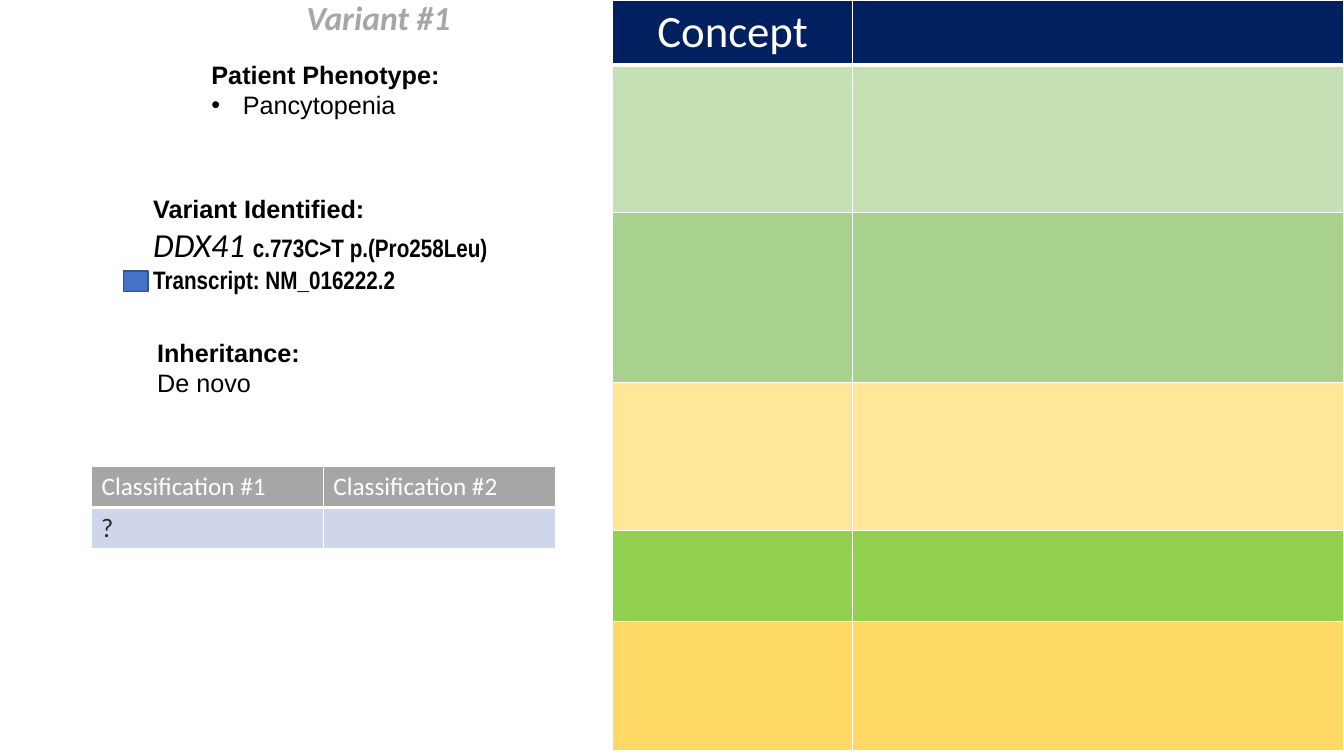
from lxml.etree import SubElement
from pptx import Presentation
from pptx.dml.color import RGBColor
from pptx.enum.shapes import MSO_SHAPE
from pptx.enum.text import PP_ALIGN
from pptx.oxml.ns import qn
from pptx.util import Cm, Pt

WHITE, BLACK, GREY = "FFFFFF", "000000", "A6A6A6"
HEAD = ("Arial", 18, BLACK, True, False)
BODY = ("Arial", 18, BLACK, False, False)
GENE = ("Calibri", 24, BLACK, False, True)
CODE = ("Arial Narrow", 18, BLACK, True, False)
TITLE = ("Calibri", 24, GREY, True, True)


def color(code):
    return RGBColor.from_string(code)


def style(run, look):
    font = run.font
    font.name, size, code, font.bold, font.italic = look
    font.size = Pt(size)
    font.color.rgb = color(code)


def fill_line(line, parts):
    for text, look in parts:
        run = line.add_run()
        run.text = text
        style(run, look)


def add_text(slide, box, lines, wrap=True):
    frame = slide.shapes.add_textbox(*map(Cm, box)).text_frame
    frame.word_wrap = wrap
    for index, parts in enumerate(lines):
        line = frame.add_paragraph() if index else frame.paragraphs[0]
        fill_line(line, parts)
    return frame


def add_bullet(line):
    props = line._p.get_or_add_pPr()
    props.set("marL", str(Cm(0.79)))
    props.set("indent", str(-Cm(0.79)))
    SubElement(props, qn("a:buFont")).set("typeface", "Arial")
    SubElement(props, qn("a:buChar")).set("char", "•")


def add_edges(cell, base):
    props = cell._tc.get_or_add_tcPr()
    for side, width in (("L", 1), ("R", 1), ("T", 1), ("B", base)):
        edge = SubElement(props, qn(f"a:ln{side}"), w=str(Pt(width)))
        paint = SubElement(edge, qn("a:solidFill"))
        SubElement(paint, qn("a:srgbClr"), val=WHITE)


def add_grid(slide, left, top, widths, heights, fills, base):
    shape = slide.shapes.add_table(
        len(heights), len(widths), Cm(left), Cm(top),
        Cm(sum(widths)), Cm(sum(heights)))
    table = shape.table
    for column, width in zip(table.columns, widths):
        column.width = Cm(width)
    for index, (row, height, code) in enumerate(zip(table.rows, heights, fills)):
        row.height = Cm(height)
        for cell in row.cells:
            add_edges(cell, 1 if index else base)
            cell.fill.solid()
            cell.fill.fore_color.rgb = color(code)
    return table


def set_cell(cell, text, look):
    line = cell.text_frame.paragraphs[0]
    fill_line(line, [(text, look)])
    return line


def add_concepts(slide, left, top):
    table = add_grid(
        slide, left, top, [6.05, 12.37],
        [1.57, 3.71, 4.29, 3.73, 2.29, 3.25],
        ["002060", "C5E0B4", "A9D18E", "FFE699", "92D050", "FFD966"], 3)
    line = set_cell(table.cell(0, 0), "Concept",
                    ("Calibri", 32, WHITE, False, False))
    line.alignment = PP_ALIGN.CENTER


def add_classes(slide, left, top):
    table = add_grid(slide, left, top, [5.84] * 2, [1.03] * 2,
                     [GREY, "CFD5EA"], 3)
    for index in range(2):
        set_cell(table.cell(0, index), f"Classification #{index + 1}",
                 ("Calibri", 18, WHITE, False, False))
    set_cell(table.cell(1, 0), "?", ("Lato", 18, "2A2A2A", False, False))


def add_marker(slide, box):
    mark = slide.shapes.add_shape(MSO_SHAPE.RECTANGLE, *map(Cm, box))
    mark.shadow.inherit = False
    mark.fill.solid()
    mark.fill.fore_color.rgb = color("4472C4")
    mark.line.color.rgb = color("325491")
    mark.line.width = Pt(1)


def add_case(slide, left, top):
    traits = add_text(slide, (left + 2.77, top + 1.57, 9.96, 2.57), [
        [("Patient Phenotype:", HEAD)],
        [("Pancytopenia", BODY)]])
    add_bullet(traits.paragraphs[1])
    variant = add_text(slide, (left + 1.3, top + 4.95, 9.14, 2.82), [
        [("Variant Identified:", HEAD)],
        [("DDX41 ", GENE), ("c.773C>T p.(Pro258Leu)", CODE)],
        [("Transcript: NM_016222.2", CODE)]])
    for line in variant.paragraphs[1:]:
        line.alignment = PP_ALIGN.JUSTIFY
    add_text(slide, (left + 1.4, top + 8.58, 12.7, 1.8), [
        [("Inheritance:", HEAD)],
        [("De novo", BODY)]])
    add_classes(slide, left, top + 11.96)
    add_text(slide, (left + 5.16, top, 4.19, 1.27),
             [[("Variant #1", TITLE)]], wrap=False)
    add_marker(slide, (left + 0.81, top + 7.03, 0.61, 0.51))


def main():
    deck = Presentation()
    deck.slide_width, deck.slide_height = Cm(33.87), Cm(19.05)
    slide = deck.slides.add_slide(deck.slide_layouts[6])
    add_concepts(slide, 15.44, 0)
    add_case(slide, 2.31, -0.2)
    deck.save("out.pptx")


if __name__ == "__main__":
    main()
